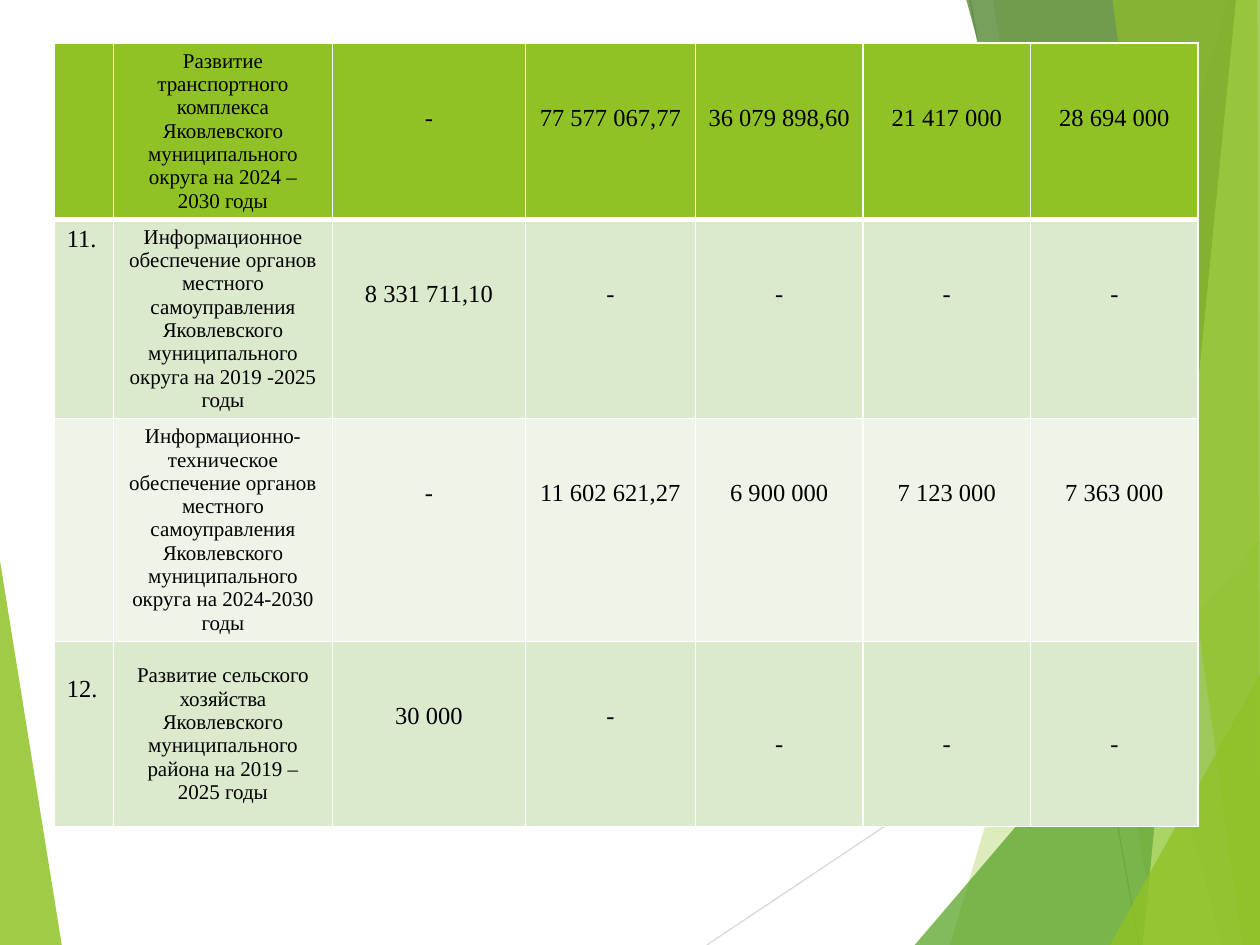
from dataclasses import dataclass

from lxml.etree import SubElement
from pptx import Presentation
from pptx.dml.color import RGBColor
from pptx.enum.shapes import MSO_CONNECTOR
from pptx.enum.text import MSO_ANCHOR, PP_ALIGN
from pptx.oxml.ns import qn
from pptx.slide import Slide
from pptx.table import Table, _Cell
from pptx.util import Inches, Pt


@dataclass(frozen=True)
class Theme:
    font: str = "Times New Roman"
    name_size: float = 12
    value_size: float = 14
    text: str = "000000"
    border: str = "FFFFFF"
    lime: str = "90C226"
    green: str = "54A021"
    forest: str = "3F7819"
    pale_lime: str = "C0E474"
    band_dark: str = "DBE9CD"
    band_light: str = "EEF4E8"
    thin: float = 1
    thick: float = 3


@dataclass(frozen=True)
class Facet:
    points: tuple[tuple[float, float], ...]
    color: str
    opacity: int


@dataclass(frozen=True)
class Ray:
    start: tuple[float, float]
    end: tuple[float, float]
    color: str


@dataclass(frozen=True)
class Program:
    height: float
    fill: str
    number: str
    name: str
    values: tuple[str, ...]
    number_drop: int = 0
    value_drops: tuple[int, ...] = (2, 2, 2, 2, 2)


THEME = Theme()
LINE_HEIGHT = 0.22
COLUMN_WIDTHS = (0.47, 1.74, 1.53, 1.35, 1.33, 1.33, 1.33)

DECORATION = (
    Facet(((0, 4.45), (0.49, 7.5), (0, 7.5)), THEME.lime, 85),
    Ray((5.61, 7.5), (10, 4.57), "D9D9D9"),
    Ray((7.7, 0), (9.04, 7.5), "BFBFBF"),
    Facet(((9.75, 0), (7.54, 7.5), (10, 7.5), (10, 0)), THEME.lime, 30),
    Facet(((7.88, 0), (9.19, 7.5), (10, 7.5), (10, 0)), THEME.lime, 20),
    Facet(((7.26, 7.5), (10, 4.29), (10, 7.5)), THEME.green, 72),
    Facet(((7.67, 0), (9.7, 7.5), (10, 7.5), (10, 0)), THEME.forest, 70),
    Facet(((9.81, 0), (9.07, 7.5), (10, 7.5), (10, 0)), THEME.pale_lime, 70),
    Facet(((8.83, 0), (9.86, 7.5), (10, 7.5), (9.98, 0)), THEME.lime, 65),
    Facet(((8.81, 7.5), (10, 5.35), (10, 7.5)), THEME.lime, 80),
)

PROGRAMS = (
    Program(1.4, THEME.lime, "",
            "Развитие транспортного комплекса Яковлевского муниципального округа на 2024 – 2030 годы",
            ("-", "77 577 067,77", "36 079 898,60", "21 417 000", "28 694 000")),
    Program(1.58, THEME.band_dark, "11.",
            "Информационное обеспечение органов местного самоуправления Яковлевского "
            "муниципального округа на 2019 -2025 годы",
            ("8 331 711,10", "-", "-", "-", "-")),
    Program(1.77, THEME.band_light, "",
            "Информационно-техническое обеспечение органов местного самоуправления Яковлевского "
            "муниципального округа на 2024-2030 годы",
            ("-", "11 602 621,27", "6 900 000", "7 123 000", "7 363 000")),
    Program(1.47, THEME.band_dark, "12.",
            "Развитие сельского хозяйства Яковлевского муниципального района на 2019 – 2025 годы",
            ("30 000", "-", "-", "-", "-"), 1, (2, 2, 3, 3, 3)),
)


def draw_facet(slide: Slide, facet: Facet) -> None:
    points = [(Inches(x), Inches(y)) for x, y in facet.points]
    builder = slide.shapes.build_freeform(*points[0])
    builder.add_line_segments(points[1:], close=True)
    shape = builder.convert_to_shape()
    shape.shadow.inherit = False
    shape.line.fill.background()
    shape.fill.solid()
    shape.fill.fore_color.rgb = RGBColor.from_string(facet.color)
    color = shape._element.spPr.find(f"{qn('a:solidFill')}/{qn('a:srgbClr')}")
    SubElement(color, qn("a:alpha"), val=str(facet.opacity * 1000))


def draw_ray(slide: Slide, ray: Ray) -> None:
    ends = [Inches(length) for length in ray.start + ray.end]
    line = slide.shapes.add_connector(MSO_CONNECTOR.STRAIGHT, *ends)
    line.line.width = Pt(0.75)
    line.line.color.rgb = RGBColor.from_string(ray.color)
    SubElement(line._element.spPr, qn("a:effectLst"))


def style_cell(cell: _Cell, fill: str, top: float, bottom: float) -> None:
    properties = cell._tc.get_or_add_tcPr()
    widths = {"lnL": THEME.thin, "lnR": THEME.thin, "lnT": top, "lnB": bottom}
    for side, width in widths.items():
        edge = SubElement(properties, qn(f"a:{side}"), w=str(Pt(width)))
        SubElement(SubElement(edge, qn("a:solidFill")), qn("a:srgbClr"), val=THEME.border)
    cell.fill.solid()
    cell.fill.fore_color.rgb = RGBColor.from_string(fill)


def write_text(cell: _Cell, text: str, *, size: float, align: PP_ALIGN = PP_ALIGN.CENTER,
               anchor: MSO_ANCHOR = MSO_ANCHOR.TOP, drop: int = 0, side: float = 0.1) -> None:
    cell.vertical_anchor = anchor
    cell.margin_left = cell.margin_right = Inches(side)
    cell.margin_top = Inches(0.05 + drop * LINE_HEIGHT)
    para = cell.text_frame.paragraphs[0]
    para.alignment = align
    para.font.size = Pt(size)
    if text:
        span = para.add_run()
        span.text = text
        span.font.name = THEME.font
        span.font.size = Pt(size)
        span.font.bold = False
        span.font.color.rgb = RGBColor.from_string(THEME.text)


def fill_row(table: Table, index: int, program: Program) -> None:
    table.rows[index].height = Inches(program.height)
    top = THEME.thick if index == 1 else THEME.thin
    bottom = THEME.thick if index == 0 else THEME.thin
    cells = list(table.rows[index].cells)
    for cell in cells:
        style_cell(cell, program.fill, top, bottom)
    number_cell, name_cell, *value_cells = cells
    write_text(number_cell, program.number, size=THEME.value_size,
               align=PP_ALIGN.LEFT, drop=program.number_drop)
    write_text(name_cell, program.name, size=THEME.name_size, anchor=MSO_ANCHOR.MIDDLE)
    for cell, value, drop in zip(value_cells, program.values, program.value_drops):
        write_text(cell, value, size=THEME.value_size, drop=drop, side=0.05)


def draw_table(slide: Slide) -> None:
    height = sum(program.height for program in PROGRAMS)
    frame = slide.shapes.add_table(len(PROGRAMS), len(COLUMN_WIDTHS), Inches(0.43), Inches(0.34),
                                   Inches(sum(COLUMN_WIDTHS)), Inches(height))
    for column, width in zip(frame.table.columns, COLUMN_WIDTHS):
        column.width = Inches(width)
    for index, program in enumerate(PROGRAMS):
        fill_row(frame.table, index, program)


def main() -> None:
    deck = Presentation()
    deck.slide_width = Inches(10)
    deck.slide_height = Inches(7.5)
    page = deck.slides.add_slide(deck.slide_layouts[6])
    for item in DECORATION:
        if isinstance(item, Facet):
            draw_facet(page, item)
        else:
            draw_ray(page, item)
    draw_table(page)
    deck.save("out.pptx")


if __name__ == "__main__":
    main()
